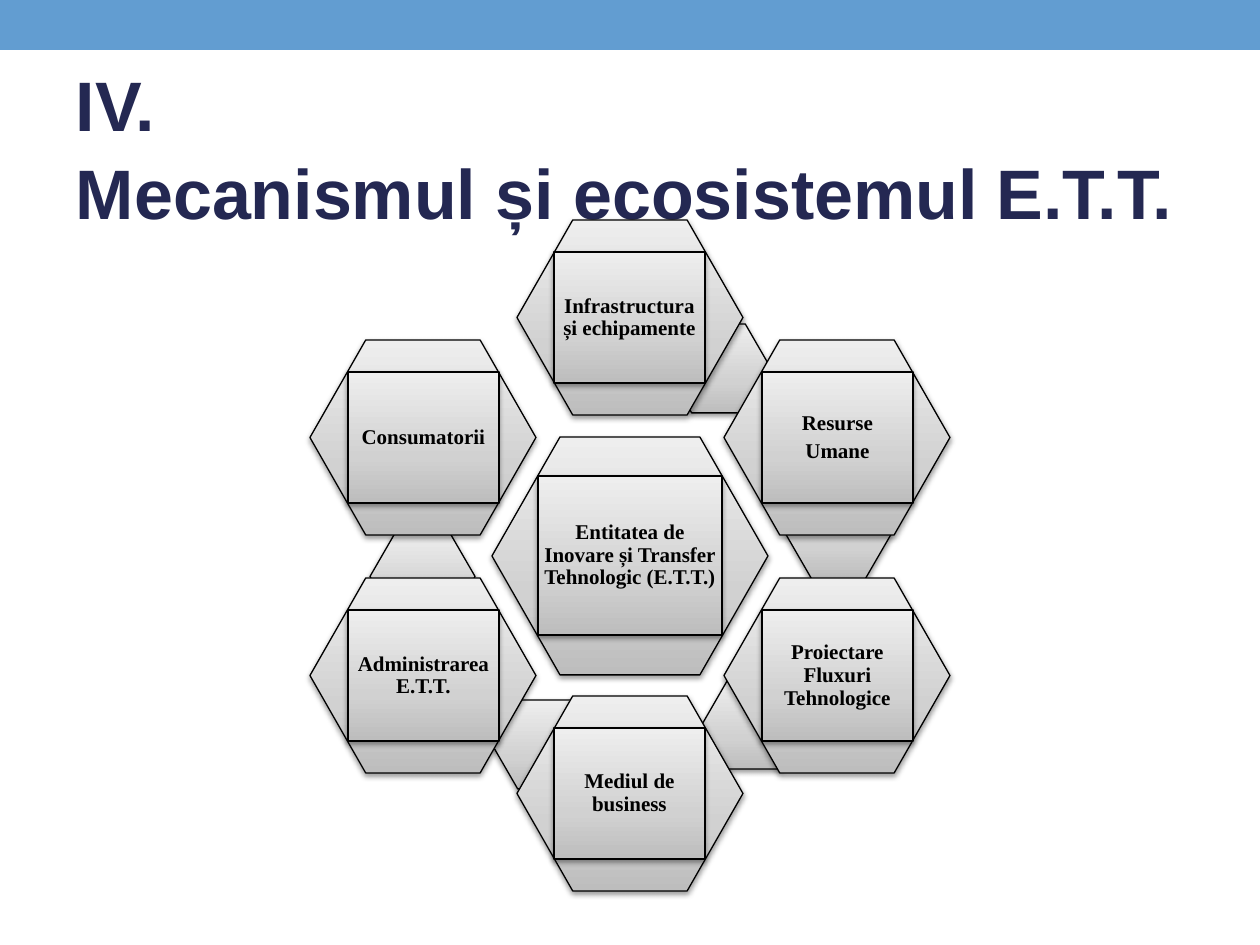
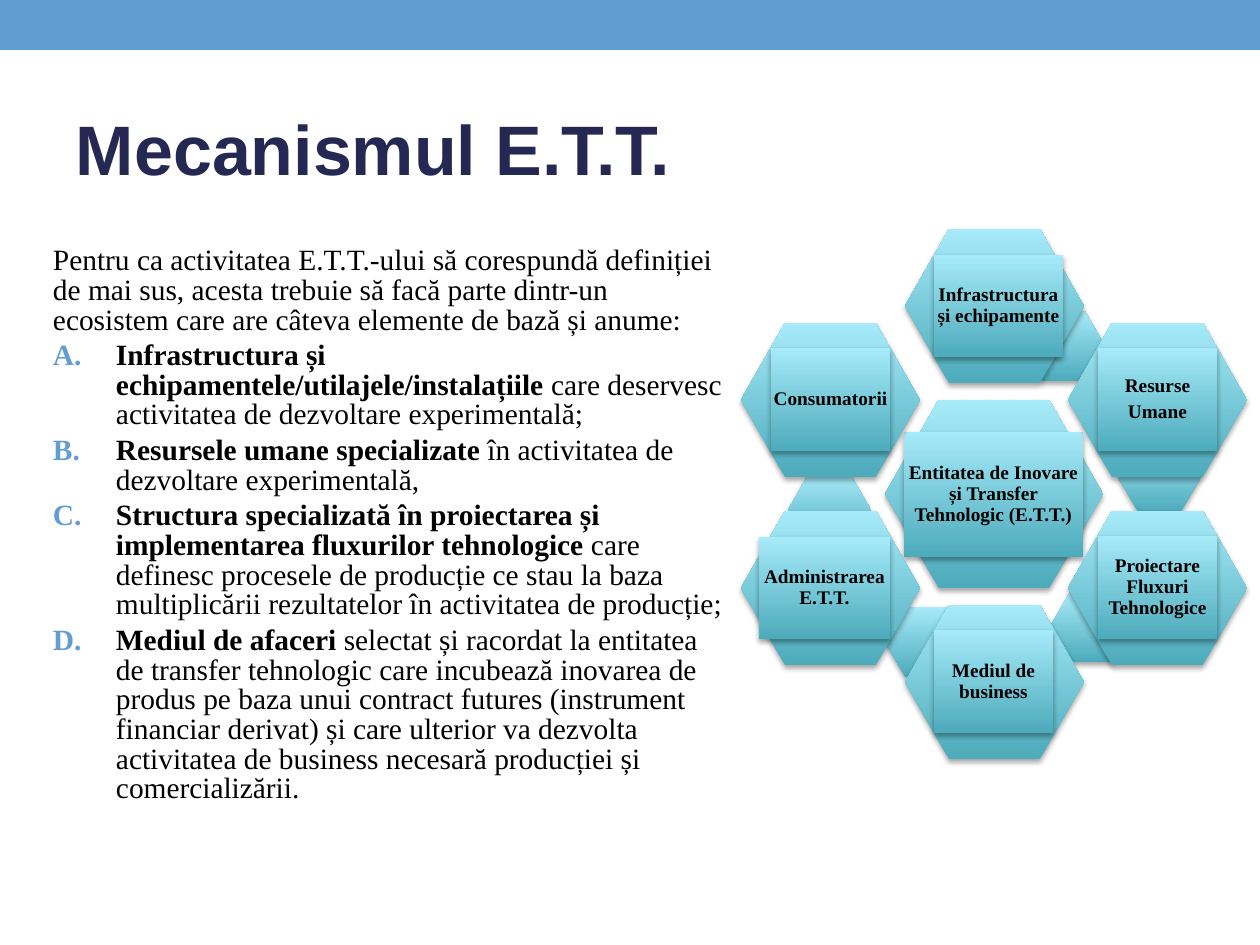
from pptx import Presentation
from pptx.dml.color import RGBColor
from pptx.enum.shapes import MSO_SHAPE
from pptx.enum.text import MSO_ANCHOR, PP_ALIGN
from pptx.oxml import parse_xml
from pptx.oxml.ns import nsdecls
from pptx.util import Inches, Pt

PX = 7257  # EMU in one px, 126 px to the inch
COLORS = {
    "band": "629DD1", "title": "242852", "text": "000000",
    "gray_dark": "BDBDBD", "gray_middle": "D1D1D1", "gray_light": "EEEEEE",
    "teal_dark": "4DABBB", "teal_light": "A7EAF9",
}
SERIF = "Times New Roman"


def write_text(frame, paragraphs, font=SERIF, size=12, color="text", bold=True,
               alignment=PP_ALIGN.LEFT, anchor=MSO_ANCHOR.MIDDLE,
               margins=(1, 1, 1, 1), line_spacing=0.9, space_before=0):
    """Each paragraph is a string, or a list of (text, bold) runs; \\v breaks a line."""
    frame.word_wrap = True
    frame.vertical_anchor = anchor
    (frame.margin_left, frame.margin_top,
     frame.margin_right, frame.margin_bottom) = [margin * PX for margin in margins]
    for index, content in enumerate(paragraphs):
        paragraph = frame.paragraphs[0] if index == 0 else frame.add_paragraph()
        paragraph.alignment = alignment
        paragraph.line_spacing = line_spacing
        paragraph.space_before = Pt(space_before if index else 0)
        runs = [(content, bold)] if isinstance(content, str) else content
        for text, run_bold in runs:
            for line_number, line in enumerate(text.split("\v")):
                if line_number:
                    paragraph.add_line_break()
                run = paragraph.add_run()
                run.text = line
                run.font.name = font
                run.font.size = Pt(size)
                run.font.bold = run_bold
                run.font.color.rgb = RGBColor.from_string(COLORS[color])


def add_tile(slide, kind, center_x, center_y, width, height, style, adjustment=None):
    """Add a shape around a centre point, with gradient, outline and soft shadow."""
    shape = slide.shapes.add_shape(
        kind, round(center_x - width / 2) * PX, round(center_y - height / 2) * PX,
        round(width) * PX, round(height) * PX)
    if adjustment:
        shape.adjustments[0] = adjustment
    stops = "".join(
        f'<a:gs pos="{position * 1000}"><a:srgbClr val="{COLORS[color]}"/></a:gs>'
        for position, color in style["stops"])
    properties = shape.element.spPr
    properties.insert(2, parse_xml(
        f'<a:gradFill {nsdecls("a")} rotWithShape="1"><a:gsLst>{stops}</a:gsLst>'
        '<a:lin ang="16200000" scaled="0"/></a:gradFill>'))
    if style["outlined"]:
        shape.line.color.rgb = RGBColor.from_string(COLORS["text"])
        shape.line.width = Pt(0.75)
    else:
        shape.line.fill.background()
    shape.shadow.inherit = False
    properties[-1].append(parse_xml(
        f'<a:outerShdw {nsdecls("a")} blurRad="{Pt(3.1)}" dist="{Pt(style["distance"])}" '
        f'dir="5400000" rotWithShape="0"><a:srgbClr val="{COLORS["text"]}">'
        f'<a:alpha val="{style["opacity"] * 1000}"/></a:srgbClr></a:outerShdw>'))
    return shape


# Full-size ecosystem: (label, column, row, link offset), measured from its centre
COLUMN_STEP, ROW_STEP = 207, 119
CENTER_LABEL = "Entitatea de Inovare și Transfer Tehnologic (E.T.T.)"
MEMBERS = [
    (["Infrastructura și echipamente"], 0, -2, (88, -187)),
    (["Resurse", "Umane"], 1, -1, (209, -21)),
    (["Proiectare Fluxuri Tehnologice"], 1, 1, (124, 168)),
    (["Mediul de business"], 0, 2, (-85, 188)),
    (["Administrarea E.T.T."], -1, 1, (-208, 20)),
    (["Consumatorii"], -1, -1, None),
]
GRAY = {"stops": [(0, "gray_dark"), (35, "gray_middle"), (100, "gray_light")],
        "outlined": True, "distance": 1.6, "opacity": 38}
TEAL = {"stops": [(0, "teal_dark"), (100, "teal_light")],
        "outlined": False, "distance": 1.8, "opacity": 35}

# wide_labels: label -> (shift, width, height) where the box differs from the rule
SLIDES = [
    {"title": "IV.\vMecanismul și ecosistemul E.T.T.", "title_width": 1153,
     "center": (630, 556), "scale": 1, "style": GRAY, "label_size": 12,
     "wide_labels": {}},
    {"title": "Mecanismul E.T.T.", "title_width": 1134,
     "center": (994, 494), "scale": 0.79, "style": TEAL, "label_size": 11,
     "wide_labels": {CENTER_LABEL: (0, 179, 125),
                     "Infrastructura și echipamente": (5, 129, 102),
                     "Administrarea E.T.T.": (-6, 131, 102)}},
]

presentation = Presentation()
presentation.slide_width = Inches(10)
presentation.slide_height = Inches(7.5)

for content in SLIDES:
    slide = presentation.slides.add_slide(presentation.slide_layouts[6])
    band = slide.shapes.add_shape(
        MSO_SHAPE.RECTANGLE, 0, 0, presentation.slide_width, 50 * PX)
    band.fill.solid()
    band.fill.fore_color.rgb = RGBColor.from_string(COLORS["band"])
    band.line.fill.background()
    band.shadow.inherit = False

    title = slide.shapes.add_textbox(63 * PX, 73 * PX, content["title_width"] * PX, 136 * PX)
    write_text(title.text_frame, [content["title"]], font="Arial", size=40, color="title",
               margins=(13, 14, 13, 6), line_spacing=1.05)

    center_x, center_y = content["center"]
    scale, style = content["scale"], content["style"]
    tiles = [([CENTER_LABEL], 0, 0, None)] + MEMBERS
    for label, column, row, link in tiles:
        is_center = column == row == 0
        hexagon_size = (276, 238) if is_center else (226, 195)
        label_size = (184, 159) if is_center else (151, 131)
        x = center_x + column * COLUMN_STEP * scale
        y = center_y + row * ROW_STEP * scale
        if link:
            add_tile(slide, MSO_SHAPE.HEXAGON, center_x + link[0] * scale,
                     center_y + link[1] * scale, 105 * scale, 89 * scale, style, 0.289)
        add_tile(slide, MSO_SHAPE.HEXAGON, x, y,
                 hexagon_size[0] * scale, hexagon_size[1] * scale, style, 0.286)
        shift, width, height = content["wide_labels"].get(
            label[0], (0, label_size[0] * scale, label_size[1] * scale))
        box = add_tile(slide, MSO_SHAPE.RECTANGLE, x + shift, y, width, height, style)
        write_text(box.text_frame, label, size=content["label_size"],
                   alignment=PP_ALIGN.CENTER, space_before=3.1)

# Explanation beside the ecosystem on the last slide
explanation = [
    [("Pentru ca activitatea E.T.T.-ului să corespundă definiției de mai sus, acesta "
      "trebuie să facă parte dintr-un ecosistem care are câteva elemente de bază și "
      "anume:", False)],
    [("Infrastructura și echipamentele/utilajele/instalațiile ", True),
     ("care deservesc activitatea de dezvoltare experimentală;", False)],
    [("Resursele umane specializate ", True),
     ("în activitatea de dezvoltare experimentală,", False)],
    [("Structura specializată în proiectarea și implementarea fluxurilor tehnologice", True),
     (" care definesc procesele de producție ce stau la baza multiplicării rezultatelor "
      "în activitatea de producție;", False)],
    [("Mediul de afaceri ", True),
     ("selectat și racordat la entitatea de transfer tehnologic care incubează inovarea "
      "de produs pe baza unui contract futures (instrument financiar derivat) și care "
      "ulterior va dezvolta activitatea de business necesară producției și "
      "comercializării.", False)],
]
body = slide.shapes.add_textbox(40 * PX, 199 * PX, 701 * PX, 672 * PX)
write_text(body.text_frame, explanation, size=16.8, anchor=MSO_ANCHOR.TOP,
           margins=(13, 48, 13, 6), line_spacing=0.84, space_before=3.4)
for paragraph in body.text_frame.paragraphs[1:]:
    properties = paragraph._p.get_or_add_pPr()
    properties.set("marL", str(63 * PX))
    properties.set("indent", str(-63 * PX))
    properties.append(parse_xml(
        f'<a:buClr {nsdecls("a")}><a:srgbClr val="{COLORS["band"]}"/></a:buClr>'))
    properties.append(parse_xml(f'<a:buAutoNum {nsdecls("a")} type="alphaUcPeriod"/>'))

presentation.save("out.pptx")
